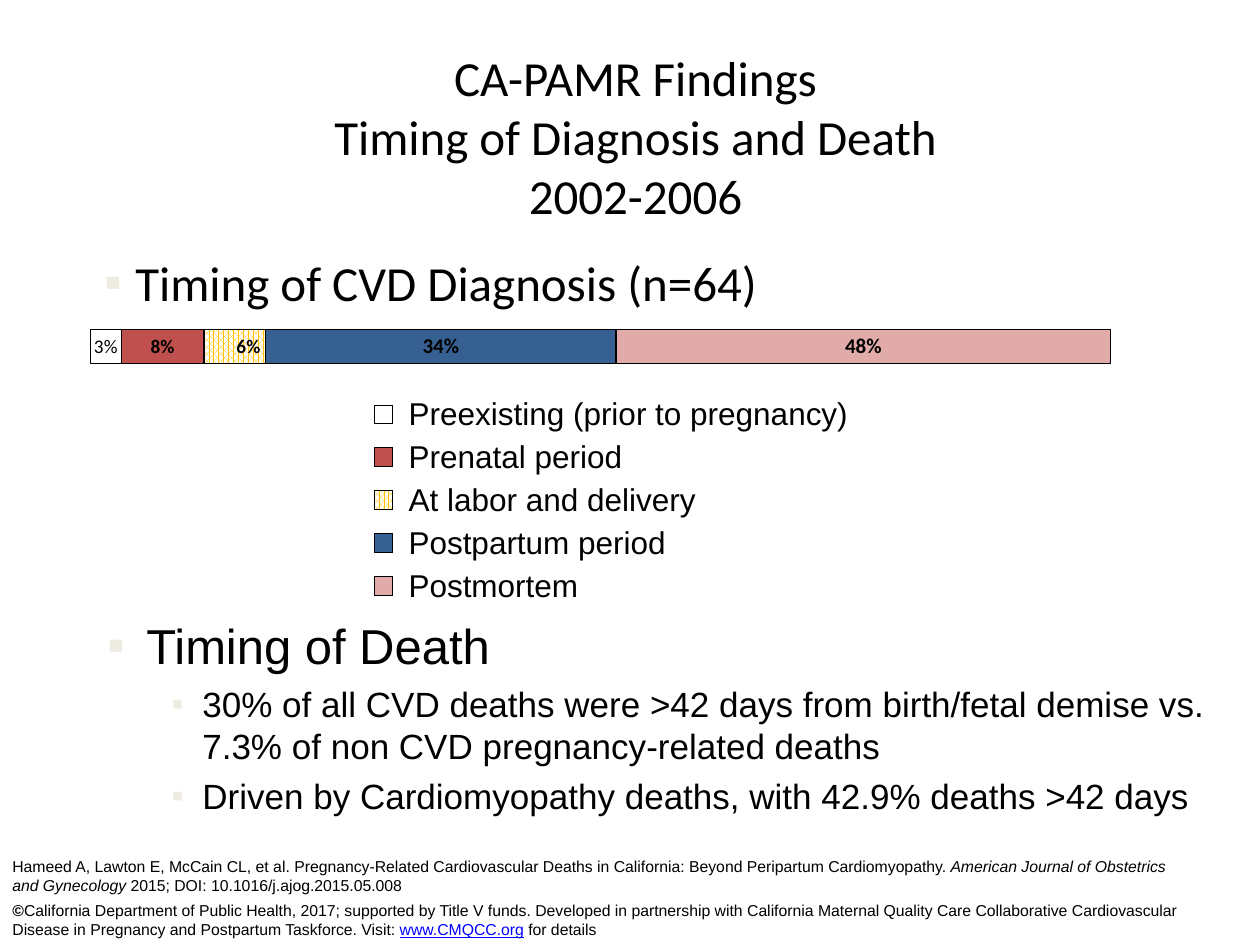
import pptx
import pptx.chart.data
import pptx.dml.color
import pptx.enum.chart
import pptx.enum.dml
import pptx.enum.text
import pptx.oxml
import pptx.oxml.ns
import pptx.util
from lxml import etree

PX = 914400 / 126
RGBColor = pptx.dml.color.RGBColor
BLACK = RGBColor(0x00, 0x00, 0x00)
WHITE = RGBColor(0xFF, 0xFF, 0xFF)
RED = RGBColor(0xC0, 0x50, 0x4D)
GOLD = RGBColor(0xFF, 0xC0, 0x00)
BLUE = RGBColor(0x37, 0x60, 0x92)
PINK = RGBColor(0xD9, 0x96, 0x94)
LINK = RGBColor(0x00, 0x00, 0xFF)
qn = pptx.oxml.ns.qn

presentation = pptx.Presentation()
presentation.slide_width = round(1260 * PX)
presentation.slide_height = round(945 * PX)
slide = presentation.slides.add_slide(presentation.slide_layouts[6])


def add_text_frame(left, top, width, height):
    box = slide.shapes.add_textbox(*(round(n * PX) for n in (left, top, width, height)))
    box.text_frame.word_wrap = True
    return box.text_frame


def add_run(paragraph, text, size, font="Arial", color=BLACK):
    run = paragraph.add_run()
    run.text = text
    run.font.size = pptx.util.Pt(size)
    run.font.name = font
    run.font.color.rgb = color
    return run


# Stacked bar of diagnosis timing: only the fourth category holds values
periods = [
    (" Preexisting (prior to pregnancy)", 0.03, WHITE, 11, False),
    (" Prenatal period", 0.08, RED, 11, True),
    (" At labor and delivery", 0.06, GOLD, 11, True),
    (" Postpartum period", 0.34, BLUE, 12, True),
    (" Postmortem", 0.48, PINK, 12, True),
]
chart_data = pptx.chart.data.CategoryChartData(number_format="0%")
chart_data.categories = ["1", "2", "3", "4", "5", "6"]
for name, share, *_ in periods:
    chart_data.add_series(name, [None, None, None, share, None, None])
chart = slide.shapes.add_chart(
    pptx.enum.chart.XL_CHART_TYPE.BAR_STACKED,
    *(round(n * PX) for n in (86, 136, 1522, 528)), chart_data).chart
chart.has_title = False
chart.font.size = pptx.util.Pt(10)
chart.font.name = "Calibri"
chart.font.color.rgb = BLACK
for axis in (chart.category_axis, chart.value_axis):
    axis.visible = False
    axis.has_major_gridlines = False
chart.value_axis.minimum_scale = 0
chart.value_axis.maximum_scale = 1

plot = chart.plots[0]
plot.gap_width = 150
plot.overlap = 100
plot.vary_by_categories = False
for series, (name, share, color, size, bold) in zip(plot.series, periods):
    fill = series.format.fill
    if color == GOLD:
        fill.patterned()
        fill.pattern = pptx.enum.dml.MSO_PATTERN.PERCENT_75
        fill.fore_color.rgb = GOLD
        fill.back_color.rgb = WHITE
    else:
        fill.solid()
        fill.fore_color.rgb = color
    if color == PINK:
        tint = next(series.format._element.iter(qn("a:srgbClr"))) if hasattr(
            series.format, "_element") else next(series._element.iter(qn("a:srgbClr")))
        etree.SubElement(tint, qn("a:alpha")).set("val", "80000")
    series.format.line.color.rgb = BLACK
    series.format.line.width = pptx.util.Pt(0.75)
    labels = series.data_labels
    labels.show_value = True
    labels.number_format = "0%"
    labels.number_format_is_linked = False
    labels.font.size = pptx.util.Pt(size)
    labels.font.bold = bold
    labels.font.name = "Calibri"
    labels.font.color.rgb = BLACK
    if color == GOLD:
        labels.position = pptx.enum.chart.XL_LABEL_POSITION.INSIDE_END

# Legend, and manual places for plot area and legend
chart.has_legend = True
legend = chart.legend
legend.position = pptx.enum.chart.XL_LEGEND_POSITION.BOTTOM
legend.include_in_layout = True
legend.font.size = pptx.util.Pt(18)
legend.font.name = "Arial"
legend.font.color.rgb = BLACK
plot_area = next(chart._chartSpace.iter(qn("c:plotArea")))
for parent, target, place in (
    (plot_area, "inner", (0.003, 0, 0.677, 0.958)),
    (legend._element, None, (0.18, 0.48, 0.33, 0.42)),
):
    for old in parent.findall(qn("c:layout")):
        parent.remove(old)
    layout = etree.Element(qn("c:layout"))
    manual = etree.SubElement(layout, qn("c:manualLayout"))
    settings = [("layoutTarget", target)] if target else []
    settings += [("xMode", "edge"), ("yMode", "edge")]
    settings += zip("xywh", place)
    for tag, value in settings:
        etree.SubElement(manual, qn("c:" + tag)).set("val", str(value))
    parent.insert(1 if parent is legend._element else 0, layout)

# Title
frame = add_text_frame(84, 73, 1103, 126)
frame.vertical_anchor = pptx.enum.text.MSO_ANCHOR.MIDDLE
paragraph = frame.paragraphs[0]
paragraph.alignment = pptx.enum.text.PP_ALIGN.CENTER
add_run(paragraph, "CA-PAMR Findings", 28, "Calibri")
for line in ("Timing of Diagnosis and Death", "2002-2006"):
    paragraph.add_line_break()
    add_run(paragraph, line, 28, "Calibri")

# Bulleted text: box, then (text, size, font, margin, hanging) for each paragraph
bullet_boxes = [
    ((29, 246, 1134, 72), [("Timing of CVD Diagnosis (n=64)", 28, "Calibri", 94, 31)]),
    ((32, 609, 1207, 217), [
        ("Timing of Death", 28, "Arial", 102, 39),
        ("30% of all CVD deaths were >42 days from birth/fetal demise vs. "
         "7.3% of non CVD pregnancy-related deaths", 20, "Arial", 158, 31),
        ("Driven by Cardiomyopathy deaths, with 42.9% deaths >42 days", 20, "Arial", 158, 31),
    ]),
]
for place, items in bullet_boxes:
    frame = add_text_frame(*place)
    for index, (text, size, font, margin, hanging) in enumerate(items):
        paragraph = frame.add_paragraph() if index else frame.paragraphs[0]
        properties = paragraph._p.get_or_add_pPr()
        properties.set("marL", str(round(margin * PX)))
        properties.set("indent", str(round(-hanging * PX)))
        bullet_color = etree.SubElement(properties, qn("a:buClr"))
        etree.SubElement(bullet_color, qn("a:srgbClr")).set("val", "EEECE1")
        etree.SubElement(properties, qn("a:buFont")).set("typeface", "Arial")
        etree.SubElement(properties, qn("a:buChar")).set("char", "▪")
        if index:
            paragraph.space_before = pptx.util.Pt(4.8)
        add_run(paragraph, text, size, font)

# Citation
paragraph = add_text_frame(0, 851, 1207, 50).paragraphs[0]
add_run(paragraph, "Hameed A, Lawton E, McCain CL, et al. Pregnancy-Related Cardiovascular Deaths "
        "in California: Beyond Peripartum Cardiomyopathy. ", 9)
add_run(paragraph, "American Journal of Obstetrics and Gynecology", 9).font.italic = True
add_run(paragraph, " 2015; DOI: 10.1016/j.ajog.2015.05.008", 9)

# Copyright line
paragraph = add_text_frame(0, 895, 1241, 50).paragraphs[0]
add_run(paragraph, "©", 9).font.bold = True
add_run(paragraph, "California Department of Public Health, 2017; supported by Title V funds. "
        "Developed in partnership with California Maternal Quality Care Collaborative "
        "Cardiovascular Disease in Pregnancy and Postpartum Taskforce. Visit: ", 9)
add_run(paragraph, "www.CMQCC.org", 9, color=LINK).font.underline = True
add_run(paragraph, " for details", 9)

presentation.save("out.pptx")
